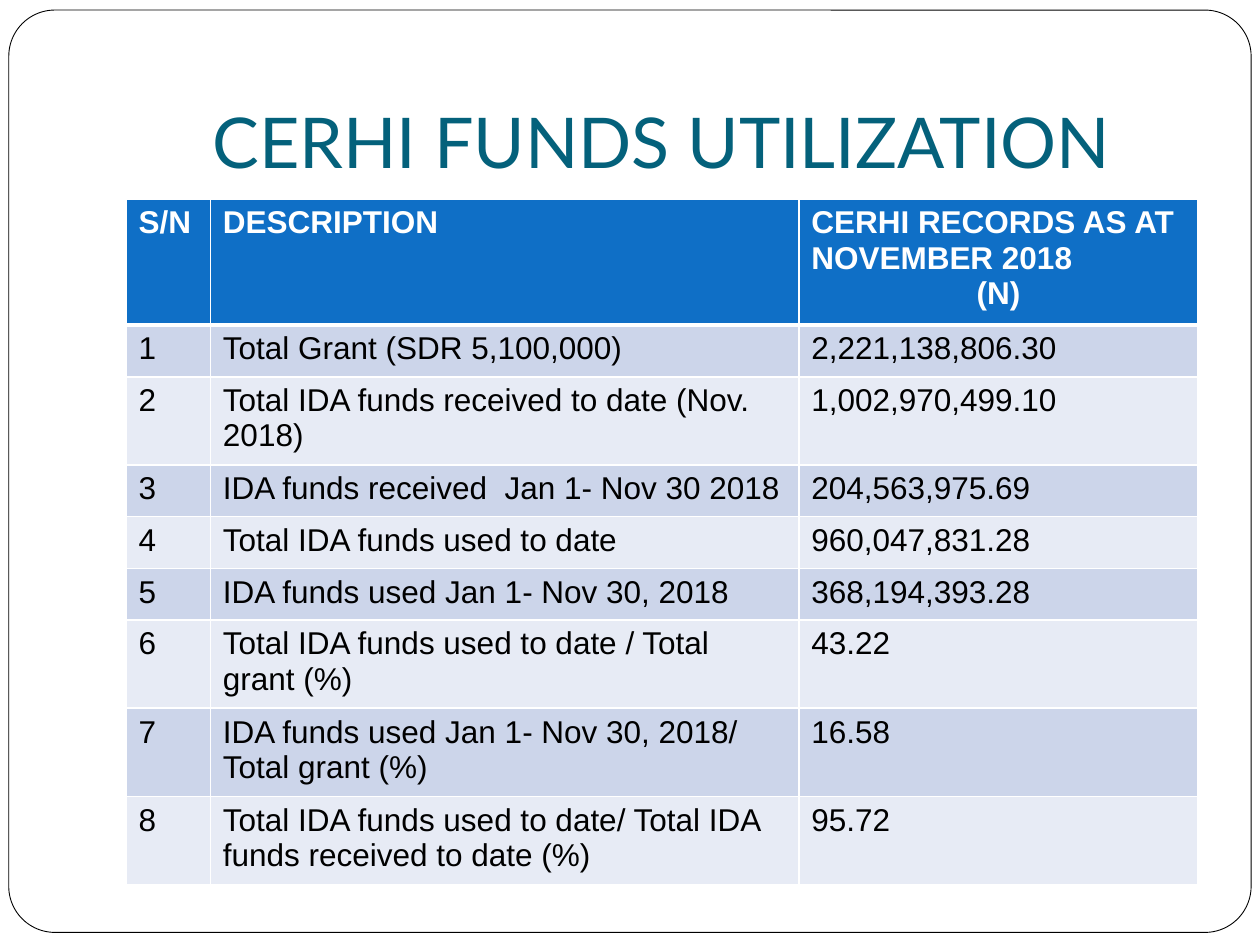
from pptx import Presentation
from pptx.dml.color import RGBColor
from pptx.enum.shapes import MSO_SHAPE
from pptx.enum.text import MSO_ANCHOR, PP_ALIGN
from pptx.oxml.ns import qn
from pptx.util import Inches, Pt
from lxml.etree import SubElement

WIDE, HIGH = 10, 7.5
COLS = [0.67, 4.67, 3.17]
ROW = 0.41
HEAD, BANDS = "0F6FC6", ["CCD5EA", "E7EBF5"]
CELL = {"name": "Arial", "size": Pt(18)}
TITLE = {"name": "Lato", "size": Pt(40), "bold": False}

# A line break in a cell starts a new paragraph
DATA = [
    ("S/N", "DESCRIPTION", "CERHI RECORDS AS AT NOVEMBER 2018\n(N)"),
    ("1", "Total Grant (SDR 5,100,000)", "2,221,138,806.30"),
    ("2", "Total IDA funds received to date (Nov. 2018)", "1,002,970,499.10"),
    ("3", "IDA funds received  Jan 1- Nov 30 2018", "204,563,975.69"),
    ("4", "Total IDA funds used to date", "960,047,831.28"),
    ("5", "IDA funds used Jan 1- Nov 30, 2018", "368,194,393.28"),
    ("6", "Total IDA funds used to date / Total grant (%)", "43.22"),
    ("7", "IDA funds used Jan 1- Nov 30, 2018/ Total grant (%)", "16.58"),
    ("8", "Total IDA funds used to date/ Total IDA funds received to date (%)",
     "95.72"),
]


def color(part, code):
    part.rgb = RGBColor.from_string(code)


def paint(fill, code):
    fill.solid()
    color(fill.fore_color, code)


def apply(item, form):
    for key, value in form.items():
        setattr(item, key, value)


def write(frame, text, form, code):
    frame.text = text
    for par in frame.paragraphs:
        for run in par.runs:
            apply(run.font, form)
            color(run.font.color, code)


def edge(cell, low):
    """White cell borders; the lower one is `low` points wide."""
    props = cell._tc.get_or_add_tcPr()
    sides = {"lnL": 1, "lnR": 1, "lnT": 1, "lnB": low}
    for spot, (side, width) in enumerate(sides.items()):
        line = SubElement(props, qn("a:" + side), w=str(Pt(width)))
        fill = SubElement(line, qn("a:solidFill"))
        SubElement(fill, qn("a:srgbClr"), val="FFFFFF")
        props.insert(spot, line)  # borders come before the fill


def frame(slide):
    box = slide.shapes.add_shape(
        MSO_SHAPE.ROUNDED_RECTANGLE, Inches(0.07), Inches(0.08),
        Inches(WIDE - 0.14), Inches(HIGH - 0.18))
    box.adjustments[0] = 0.05
    box.shadow.inherit = False
    paint(box.fill, "FFFFFF")
    color(box.line.color, "000000")
    box.line.width = Pt(0.5)


def title(slide, text):
    box = slide.shapes.add_textbox(
        Inches(WIDE * 0.1), Inches(HIGH * 0.04),
        Inches(WIDE * 0.85), Inches(1.25))
    apply(box.text_frame, {
        "word_wrap": True, "vertical_anchor": MSO_ANCHOR.BOTTOM,
        "margin_bottom": Inches(0.1)})
    write(box.text_frame, text, TITLE, "04617B")
    box.text_frame.paragraphs[0].alignment = PP_ALIGN.CENTER


def grid(slide, data):
    table = slide.shapes.add_table(
        len(data), len(COLS), Inches(WIDE * 0.1), Inches(1.58),
        Inches(sum(COLS)), Inches(ROW * len(data))).table
    for col, width in zip(table.columns, COLS):
        col.width = Inches(width)
    for r, words in enumerate(data):
        table.rows[r].height = Inches(ROW)
        top = r == 0
        for c, text in enumerate(words):
            cell = table.cell(r, c)
            write(cell.text_frame, text, {**CELL, "bold": top},
                  "FFFFFF" if top else "000000")
            paint(cell.fill, HEAD if top else BANDS[(r - 1) % 2])
            edge(cell, 3 if top else 1)
    # The currency sign sits centred under its heading
    unit = table.cell(0, 2).text_frame.paragraphs[1]
    unit.alignment = PP_ALIGN.CENTER


def main():
    deck = Presentation()
    apply(deck, {"slide_width": Inches(WIDE), "slide_height": Inches(HIGH)})
    slide = deck.slides.add_slide(deck.slide_layouts[6])
    paint(slide.background.fill, "FFFFFF")
    frame(slide)
    title(slide, "CERHI FUNDS UTILIZATION")
    grid(slide, DATA)
    deck.save("out.pptx")


if __name__ == "__main__":
    main()
